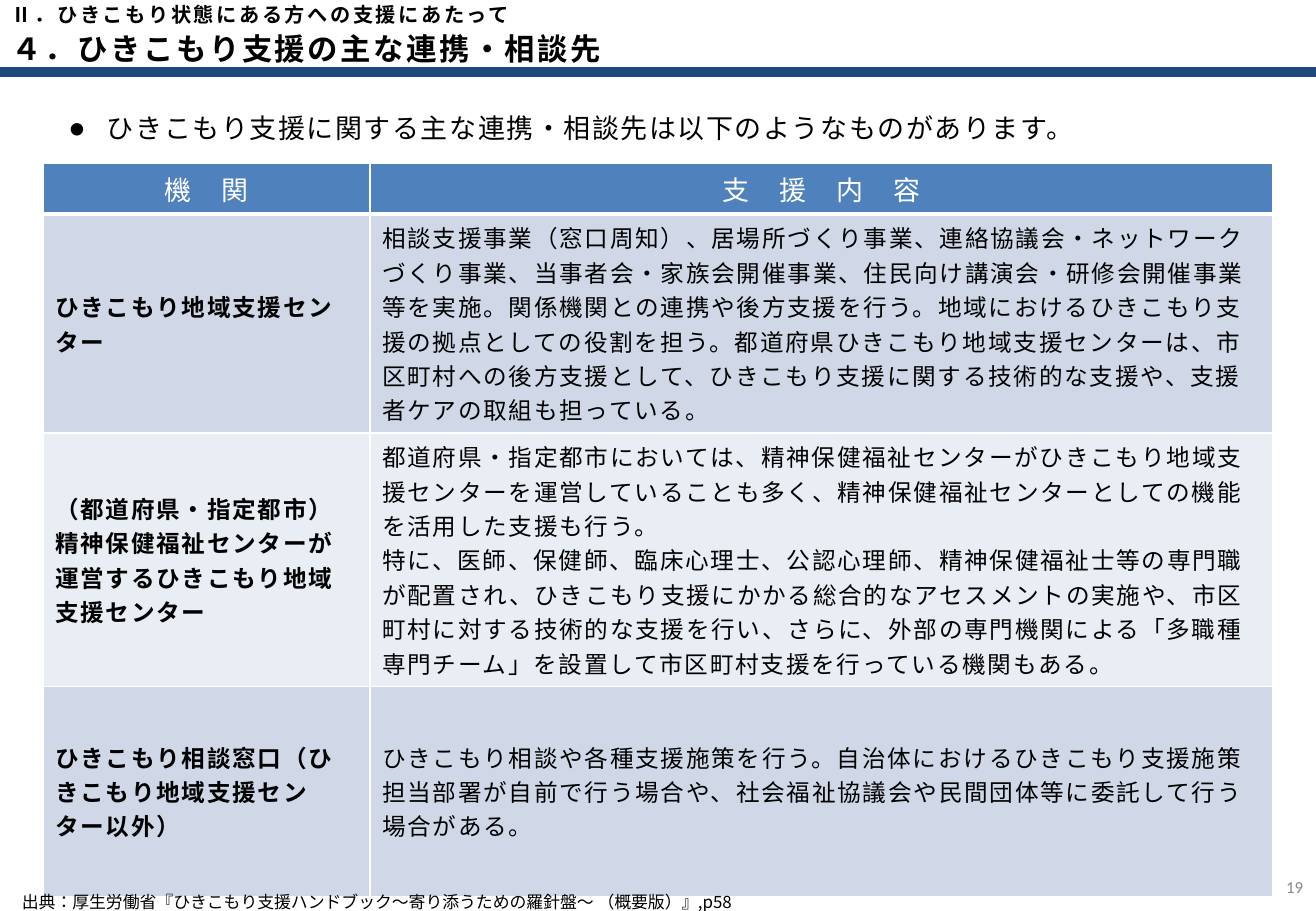
from lxml import etree
from pptx import Presentation
from pptx import util as u
from pptx.dml.color import RGBColor
from pptx.enum import shapes, text
from pptx.oxml.ns import qn

PX = 914400 / 121.5
SANS = "Noto Sans CJK JP"
LEFT, MID, RIGHT = text.PP_ALIGN.LEFT, text.PP_ALIGN.CENTER, text.PP_ALIGN.RIGHT


def rgb(code):
    return RGBColor.from_string(code)


def write(para, words, size, color="000000", bold=False, gap=0, align=LEFT,
          face=SANS, lang=None):
    para.alignment = align
    run = para.add_run()
    run.text = words
    font = run.font
    font.size, font.bold, font.name = u.Pt(size), bold, face
    font.color.rgb = rgb(color)
    props = run._r.get_or_add_rPr()
    etree.SubElement(props, qn("a:ea")).set("typeface", face)
    if gap:
        props.set("spc", str(int(gap * 100)))
    if lang:
        props.set("lang", lang)


deck = Presentation()
deck.slide_width, deck.slide_height = int(1316 * PX), int(911 * PX)
slide = deck.slides.add_slide(deck.slide_layouts[6])

# Rule under the title
rule = slide.shapes.add_connector(
    shapes.MSO_CONNECTOR.STRAIGHT, 0, int(72 * PX), int(1316 * PX), int(72 * PX))
rule.line.color.rgb = rgb("1F497D")
rule.line.width = u.Pt(6)
etree.SubElement(rule._element.spPr, qn("a:effectLst"))

# Table
HEAD = ["機　関", "支　援　内　容"]
BODY = [
    ["ひきこもり地域支援センター",
     "相談支援事業（窓口周知）、居場所づくり事業、連絡協議会・ネットワークづくり事業、"
     "当事者会・家族会開催事業、住民向け講演会・研修会開催事業等を実施。"
     "関係機関との連携や後方支援を行う。地域におけるひきこもり支援の拠点としての役割を担う。"
     "都道府県ひきこもり地域支援センターは、市区町村への後方支援として、"
     "ひきこもり支援に関する技術的な支援や、支援者ケアの取組も担っている。"],
    ["（都道府県・指定都市）精神保健福祉センターが運営するひきこもり地域支援センター",
     "都道府県・指定都市においては、精神保健福祉センターがひきこもり地域支援センターを"
     "運営していることも多く、精神保健福祉センターとしての機能を活用した支援も行う。\n"
     "特に、医師、保健師、臨床心理士、公認心理師、精神保健福祉士等の専門職が配置され、"
     "ひきこもり支援にかかる総合的なアセスメントの実施や、市区町村に対する技術的な支援を行い、"
     "さらに、外部の専門機関による「多職種専門チーム」を設置して"
     "市区町村支援を行っている機関もある。"],
    ["ひきこもり相談窓口（ひきこもり地域支援センター以外）",
     "ひきこもり相談や各種支援施策を行う。自治体におけるひきこもり支援施策担当部署が"
     "自前で行う場合や、社会福祉協議会や民間団体等に委託して行う場合がある。"],
]
FILLS = ["4F81BD", "D0D8E8", "E9EDF4", "D0D8E8"]

table = slide.shapes.add_table(
    4, 2, int(43 * PX), int(163 * PX), int(1230 * PX), int(680 * PX)).table
for col, width in zip(table.columns, [327, 903]):
    col.width = int(width * PX)
for row, height in zip(table.rows, [50, 210, 210, 210]):
    row.height = int(height * PX)

for r, line in enumerate([HEAD] + BODY):
    for c, words in enumerate(line):
        cell = table.cell(r, c)
        cell.vertical_anchor = text.MSO_ANCHOR.MIDDLE
        cell.fill.solid()
        cell.fill.fore_color.rgb = rgb(FILLS[r])
        frame = cell.text_frame
        for n, part in enumerate(words.split("\n")):
            para = frame.add_paragraph() if n else frame.paragraphs[0]
            if r == 0:
                write(para, part, 16, "FFFFFF", gap=1, align=MID)
            else:
                write(para, part, 14, bold=c == 0, gap=1)
        # White borders, thicker below the header
        props = cell._tc.get_or_add_tcPr()
        for n, side in enumerate("LRTB"):
            thick = (r, side) in [(0, "B"), (1, "T")]
            edge = etree.Element(qn("a:ln" + side), w=str(u.Pt(3 if thick else 1)))
            fill = etree.SubElement(edge, qn("a:solidFill"))
            etree.SubElement(fill, qn("a:srgbClr")).set("val", "FFFFFF")
            props.insert(n, edge)

# Text boxes: place, anchor, words, style
TOP, MIDDLE = text.MSO_ANCHOR.TOP, text.MSO_ANCHOR.MIDDLE
BOXES = {
    "lead": ((57, 106, 1203, 58), TOP,
             "ひきこもり支援に関する主な連携・相談先は以下のようなものがあります。",
             dict(size=16, gap=1)),
    "title": ((0, 25, 1238, 47), MIDDLE, "４．ひきこもり支援の主な連携・相談先",
              dict(size=18, bold=True, gap=1.5)),
    "part": ((0, 1, 1102, 26), MIDDLE, "Ⅱ．ひきこもり状態にある方への支援にあたって",
             dict(size=12, bold=True, gap=1.5)),
    "credit": ((10, 892, 1091, 18), TOP,
               "出典：厚生労働省『ひきこもり支援ハンドブック～寄り添うための羅針盤～ （概要版）』,p58",
               dict(size=10, lang="ja-JP")),
    "number": ((1266, 863, 49, 47), MIDDLE, "19",
               dict(size=10, color="898989", align=RIGHT, face="Calibri")),
}
for name, (place, anchor, words, style) in BOXES.items():
    box = slide.shapes.add_textbox(*[int(v * PX) for v in place])
    frame = box.text_frame
    frame.word_wrap = True
    frame.vertical_anchor = anchor
    para = frame.paragraphs[0]
    write(para, words, **style)
    if name == "credit":
        frame.margin_top = frame.margin_bottom = 0
    if name == "lead":
        para.space_before = u.Pt(12)
        props = para._p.get_or_add_pPr()
        props.set("marL", str(int(38 * PX)))
        props.set("indent", str(int(-38 * PX)))
        etree.SubElement(props, qn("a:buFont")).set("typeface", "Calibri")
        etree.SubElement(props, qn("a:buChar")).set("char", "●")

deck.save("out.pptx")
